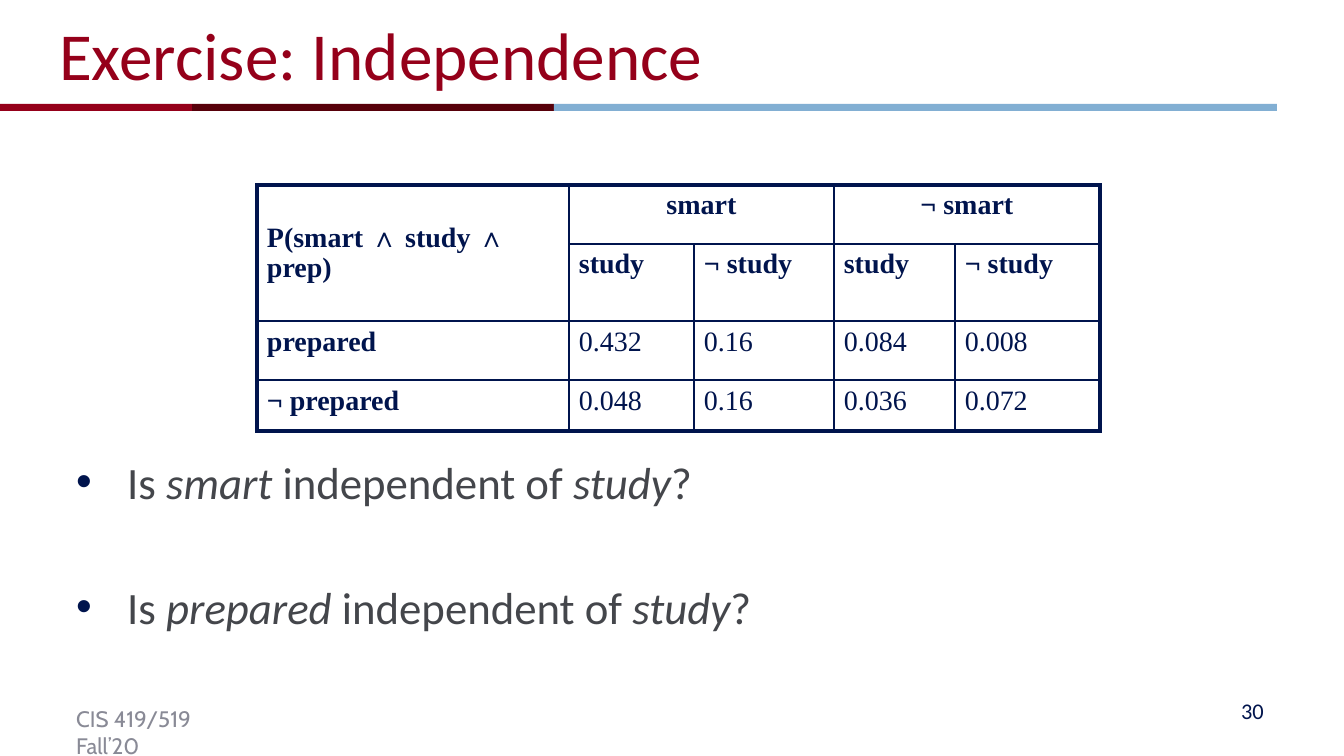
import pptx
import pptx.util
import pptx.oxml
import pptx.oxml.ns
import pptx.dml.color
import pptx.enum.shapes
import pptx.enum.text

RGBColor = pptx.dml.color.RGBColor
ALIGN = pptx.enum.text.PP_ALIGN
ANCHOR = pptx.enum.text.MSO_ANCHOR
Pt = pptx.util.Pt

CRIMSON = RGBColor(0x95, 0x00, 0x1A)
MAROON = RGBColor(0x57, 0x00, 0x0A)
SKY = RGBColor(0x82, 0xAF, 0xD3)
NAVY = RGBColor(0x00, 0x14, 0x4D)
SLATE = RGBColor(0x44, 0x46, 0x4B)
GREY = RGBColor(0x89, 0x8A, 0x96)

# Content
TITLE = "Exercise: Independence"
FOOTER = "CIS 419/519 Fall’20"
PAGE_NUMBER = "30"
QUESTIONS = [("smart", "study"), ("prepared", "study")]
TABLE_ROWS = [
    ["P(smart ∧ study ∧ prep)", "smart", "", "¬ smart", ""],
    ["", "study", "¬ study", "study", "¬ study"],
    ["prepared", "0.432", "0.16", "0.084", "0.008"],
    ["¬ prepared", "0.048", "0.16", "0.036", "0.072"],
]
MERGES = [((0, 0), (1, 0)), ((0, 1), (0, 2)), ((0, 3), (0, 4))]

# Layout in px
SCALE = 914400 / 134.4
TABLE_LEFT, TABLE_TOP = 257, 185
COLUMN_WIDTHS = [312, 125, 140, 121, 145]
ROW_HEIGHTS = [59, 72, 59, 51]
BAR_TOP, BAR_HEIGHT = 104, 7
BAR_EDGES = [-1, 192, 554, 1277]
BAR_COLOURS = [CRIMSON, MAROON, SKY]
BULLET_INDENT = 51
THIN, THICK = Pt(1), Pt(2.25)

TITLE_FONT = {"name": "Calibri", "size": Pt(36), "color": CRIMSON}
BODY_FONT = {"name": "Calibri", "size": Pt(24), "color": SLATE}
NUMBER_FONT = {"name": "Calibri", "size": Pt(12), "color": NAVY}
FOOTER_FONT = {"name": "Cabin", "size": Pt(12), "color": GREY}
TABLE_FONT = {"name": "Times New Roman", "size": Pt(15), "color": NAVY}


def px(length):
    return pptx.util.Emu(round(length * SCALE))


def add_span(para, text, font, **extra):
    span = para.add_run()
    span.text = text
    for name, value in {**font, **extra}.items():
        if name == "color":
            span.font.color.rgb = value
        else:
            setattr(span.font, name, value)


def add_text_frame(page, left, top, width, height, anchor=ANCHOR.TOP):
    box = page.shapes.add_textbox(px(left), px(top), px(width), px(height))
    frame = box.text_frame
    frame.word_wrap = True
    frame.vertical_anchor = anchor
    return frame


def add_bullet(para):
    properties = para._p.get_or_add_pPr()
    properties.set("marL", str(px(BULLET_INDENT)))
    properties.set("indent", str(-px(BULLET_INDENT)))
    namespace = pptx.oxml.ns.nsdecls("a")
    for xml in (
        f'<a:buClr {namespace}><a:srgbClr val="{NAVY}"/></a:buClr>',
        f'<a:buFont {namespace} typeface="Arial"/>',
        f'<a:buChar {namespace} char="•"/>',
    ):
        properties.append(pptx.oxml.parse_xml(xml))


def set_borders(cell, widths):
    properties = cell._tc.get_or_add_tcPr()
    for index, (side, width) in enumerate(widths.items()):
        properties.insert(index, pptx.oxml.parse_xml(
            f'<a:ln{side} {pptx.oxml.ns.nsdecls("a")} w="{width}"><a:solidFill>'
            f'<a:srgbClr val="{NAVY}"/></a:solidFill></a:ln{side}>'))


def add_probability_table(page):
    row_count, column_count = len(ROW_HEIGHTS), len(COLUMN_WIDTHS)
    table = page.shapes.add_table(
        row_count, column_count, px(TABLE_LEFT), px(TABLE_TOP),
        px(sum(COLUMN_WIDTHS)), px(sum(ROW_HEIGHTS))).table
    table.first_row = table.horz_banding = False
    for column, width in zip(table.columns, COLUMN_WIDTHS):
        column.width = px(width)
    for row, height in zip(table.rows, ROW_HEIGHTS):
        row.height = px(height)
    for first, last in MERGES:
        table.cell(*first).merge(table.cell(*last))

    for r, texts in enumerate(TABLE_ROWS):
        for c, text in enumerate(texts):
            cell = table.cell(r, c)
            cell.fill.background()
            cell.margin_left = cell.margin_right = px(10)
            cell.margin_top = cell.margin_bottom = px(5)
            set_borders(cell, {
                "L": THICK if c == 0 else THIN,
                "R": THICK if c + cell.span_width == column_count else THIN,
                "T": THICK if r == 0 else THIN,
                "B": THICK if r + cell.span_height == row_count else THIN,
            })
            if not text:
                continue
            para = cell.text_frame.paragraphs[0]
            if cell.span_width > 1:
                para.alignment = ALIGN.CENTER
            if cell.span_height > 1:
                cell.vertical_anchor = ANCHOR.MIDDLE
            add_span(para, text, TABLE_FONT, bold=r < 2 or c == 0)


def main():
    deck = pptx.Presentation()
    deck.slide_width, deck.slide_height = px(1344), px(756)
    page = deck.slides.add_slide(deck.slide_layouts[6])

    # Footer
    frame = add_text_frame(page, 63, 699, 204, 40)
    add_span(frame.paragraphs[0], FOOTER, FOOTER_FONT)

    # Three-part rule under the title
    for left, right, colour in zip(BAR_EDGES, BAR_EDGES[1:], BAR_COLOURS):
        bar = page.shapes.add_shape(
            pptx.enum.shapes.MSO_SHAPE.RECTANGLE,
            px(left), px(BAR_TOP), px(right - left), px(BAR_HEIGHT))
        bar.shadow.inherit = False
        bar.fill.solid()
        bar.fill.fore_color.rgb = colour
        bar.line.fill.background()

    # Page number
    frame = add_text_frame(page, 964, 691, 313, 40, ANCHOR.MIDDLE)
    frame.paragraphs[0].alignment = ALIGN.RIGHT
    add_span(frame.paragraphs[0], PAGE_NUMBER, NUMBER_FONT)

    # Title
    frame = add_text_frame(page, 46, 3, 1210, 102, ANCHOR.MIDDLE)
    add_span(frame.paragraphs[0], TITLE, TITLE_FONT)

    # Questions
    frame = add_text_frame(page, 63, 448, 1210, 227)
    for index, (event, condition) in enumerate(QUESTIONS):
        para = frame.add_paragraph() if index else frame.paragraphs[0]
        if index:
            para.space_before = Pt(38)
        add_bullet(para)
        for part, italic in (("Is ", False), (event, True),
                             (" independent of ", False),
                             (condition, True), ("?", False)):
            add_span(para, part, BODY_FONT, italic=italic)

    add_probability_table(page)
    deck.save("out.pptx")


if __name__ == "__main__":
    main()
